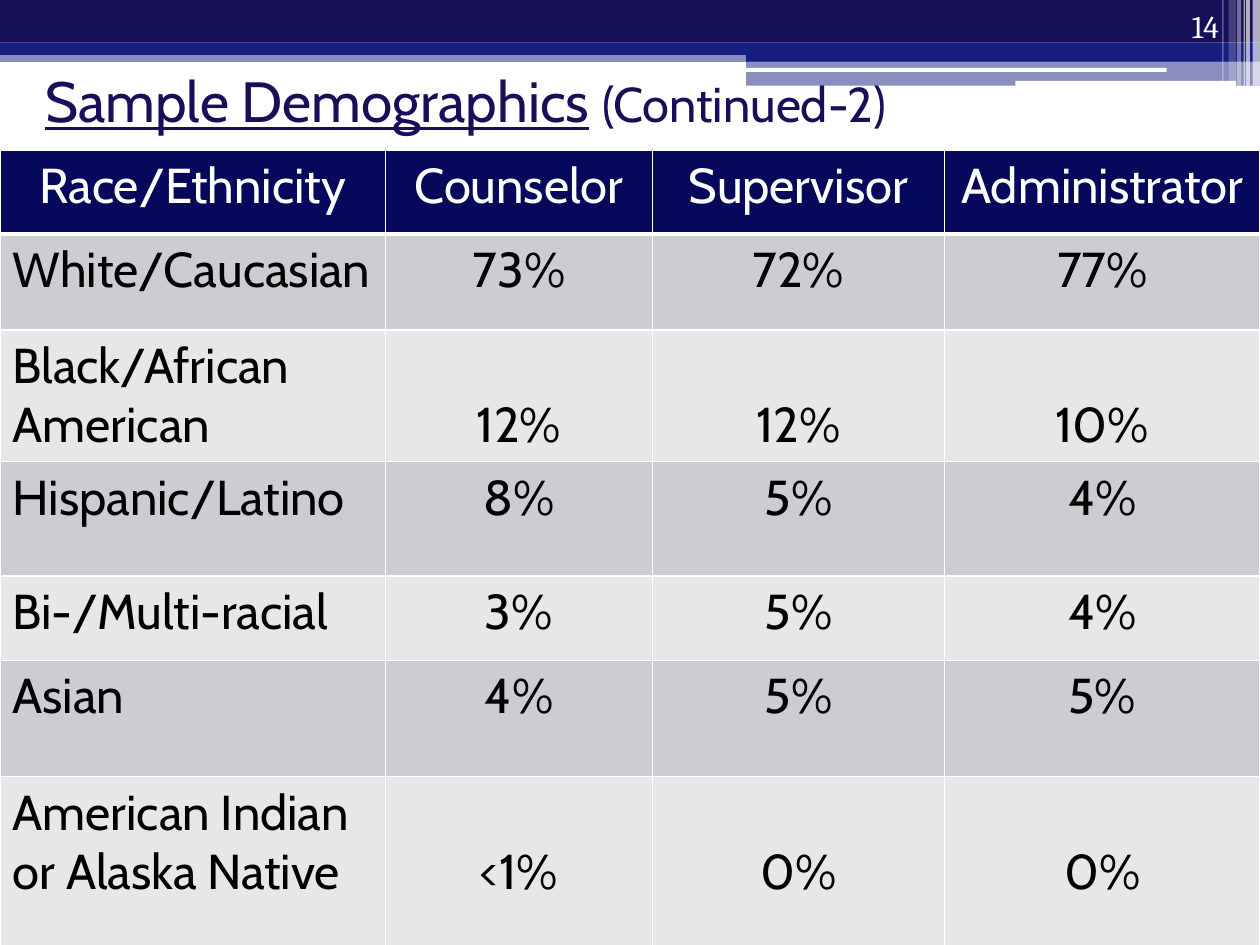
from lxml.etree import SubElement
from pptx import Presentation
from pptx.dml.color import RGBColor
from pptx.enum.shapes import MSO_SHAPE
from pptx.enum.text import MSO_ANCHOR, MSO_AUTO_SIZE, PP_ALIGN
from pptx.oxml.ns import qn
from pptx.util import Cm, Pt

COLORS = {
    "navy": "171059", "blue": "161E7E", "header": "06085B",
    "odd": "CCCCD2", "even": "E7E7EA", "white": "FFFFFF", "black": "000000",
}
BANDS = [
    (0, 1.02, 25.4, 0.23, "blue", 50),
    (0, 0, 25.4, 0.86, "navy", 100),
    (0, 0.86, 25.4, 0.25, "blue", 100),
    (15.04, 0.99, 10.36, 0.25, "blue", 100),
    (15.04, 1.22, 10.36, 0.51, "blue", 50),
]
PILLS = [(15.01, 1.37, 8.51, 0.08), (20.47, 1.63, 4.45, 0.1)]
STRIPES = [
    (25.25, 0.15, 1.73, 65), (25.12, 0.08, 1.73, 65), (25.07, 0.03, 1.73, 60),
    (24.94, 0.08, 1.73, 40), (24.77, 0.15, 1.63, 20), (24.64, 0.03, 1.63, 30),
]
COL_WIDTHS = [7.77, 5.38, 5.89, 6.36]
ROW_HEIGHTS = [1.7, 1.93, 2.46, 2.31, 1.7, 2.34, 3.56]
ROWS = [
    ("Race/Ethnicity", "Counselor", "Supervisor", "Administrator"),
    ("White/Caucasian", "73%", "72%", "77%"),
    ("Black/African\nAmerican", "12%", "12%", "10%"),
    ("Hispanic/Latino", "8%", "5%", "4%"),
    ("Bi-/Multi-racial", "3%", "5%", "4%"),
    ("Asian", "4%", "5%", "5%"),
    ("American Indian or Alaska Native", "<1%", "0%", "0%"),
]
TWO_LINE_ROWS = (2, 6)


def rgb(name):
    """Return the named palette colour."""
    return RGBColor.from_string(COLORS[name])


def add_text(p, text, size=28, font="Cabin", color="black", underline=False, align=PP_ALIGN.LEFT):
    """Append a formatted run to a paragraph."""
    p.alignment = align
    r = p.add_run()
    r.text = text
    r.font.size = Pt(size)
    r.font.name = font
    r.font.underline = underline
    r.font.color.rgb = rgb(color)


def add_bar(s, left, top, width, height, color, opacity=100, kind=MSO_SHAPE.RECTANGLE):
    """Draw a borderless bar with the given opacity in percent."""
    sp = s.shapes.add_shape(kind, Cm(left), Cm(top), Cm(width), Cm(height))
    sp.shadow.inherit = False
    sp.line.fill.background()
    sp.fill.solid()
    sp.fill.fore_color.rgb = rgb(color)
    if opacity < 100:
        clr = sp.element.spPr.find(qn("a:solidFill"))[0]
        SubElement(clr, qn("a:alpha"), val=str(opacity * 1000))


def add_banner(s):
    """Draw the decorative bars across the top."""
    for band in BANDS:
        add_bar(s, *band)
    for pill in PILLS:
        add_bar(s, *pill, "white", kind=MSO_SHAPE.ROUNDED_RECTANGLE)
    for left, width, height, opacity in STRIPES:
        add_bar(s, left, 0, width, height, "white", opacity)


def add_title(s):
    """Place and fill the title, in front of the banner."""
    title = s.shapes.title
    title.left, title.top, title.width, title.height = Cm(0.66), Cm(1.5), Cm(23.47), Cm(1.02)
    s.shapes.element.append(title.element)
    tf = title.text_frame
    tf.auto_size = MSO_AUTO_SIZE.NONE
    tf.vertical_anchor = MSO_ANCHOR.MIDDLE
    p = tf.paragraphs[0]
    add_text(p, "Sample Demographics", size=32.4, color="navy", underline=True)
    add_text(p, " ", size=32.4, color="navy")
    add_text(p, "(Continued-2)", size=27.9, color="navy")


def set_borders(cell, bottom):
    """Give a cell white borders with its own bottom width in points."""
    tc_pr = cell._tc.get_or_add_tcPr()
    for side, width in (("L", 1), ("R", 1), ("T", 1), ("B", bottom)):
        ln = SubElement(tc_pr, qn(f"a:ln{side}"), w=str(Pt(width)))
        fill = SubElement(ln, qn("a:solidFill"))
        SubElement(fill, qn("a:srgbClr"), val=COLORS["white"])


def fill_cell(cell, text, row, col):
    """Write and style one table cell."""
    is_header = row == 0
    set_borders(cell, 3 if is_header else 1)
    cell.fill.solid()
    cell.fill.fore_color.rgb = rgb("header" if is_header else "odd" if row % 2 else "even")
    if row in TWO_LINE_ROWS and col > 0:
        cell.margin_top = Cm(1.32)
    tf = cell.text_frame
    for i, line in enumerate(text.split("\n")):
        p = tf.add_paragraph() if i else tf.paragraphs[0]
        add_text(p, line, color="white" if is_header else "black",
                 align=PP_ALIGN.CENTER if is_header or col else PP_ALIGN.LEFT)


def add_demographics(s):
    """Add the race and ethnicity table."""
    table = s.shapes.add_table(len(ROWS), len(COL_WIDTHS), Cm(0), Cm(3.02),
                               Cm(sum(COL_WIDTHS)), Cm(sum(ROW_HEIGHTS))).table
    for column, width in zip(table.columns, COL_WIDTHS):
        column.width = Cm(width)
    for r, (height, texts) in enumerate(zip(ROW_HEIGHTS, ROWS)):
        table.rows[r].height = Cm(height)
        for c, text in enumerate(texts):
            fill_cell(table.cell(r, c), text, r, c)


def add_page_number(s, number):
    """Write the page number in the top right corner."""
    tf = s.shapes.add_textbox(Cm(22.71), Cm(0), Cm(2.11), Cm(1.02)).text_frame
    tf.word_wrap = True
    tf.vertical_anchor = MSO_ANCHOR.BOTTOM
    add_text(tf.paragraphs[0], number, size=18, font="Cambria", color="white", align=PP_ALIGN.RIGHT)


def main():
    """Build and save the slide."""
    prs = Presentation()
    prs.slide_width, prs.slide_height = Cm(25.4), Cm(19.05)
    s = prs.slides.add_slide(prs.slide_layouts[5])
    add_banner(s)
    add_title(s)
    add_demographics(s)
    add_page_number(s, "14")
    prs.save("out.pptx")


if __name__ == "__main__":
    main()
